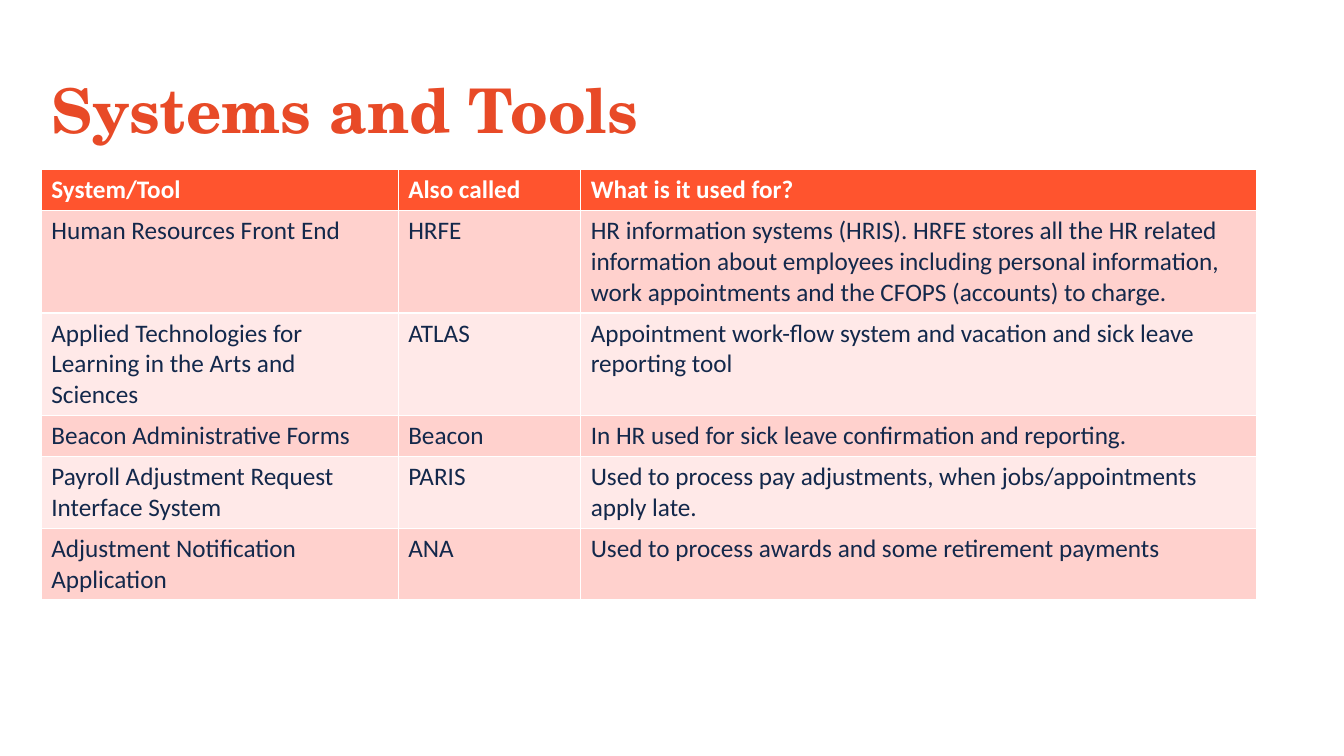
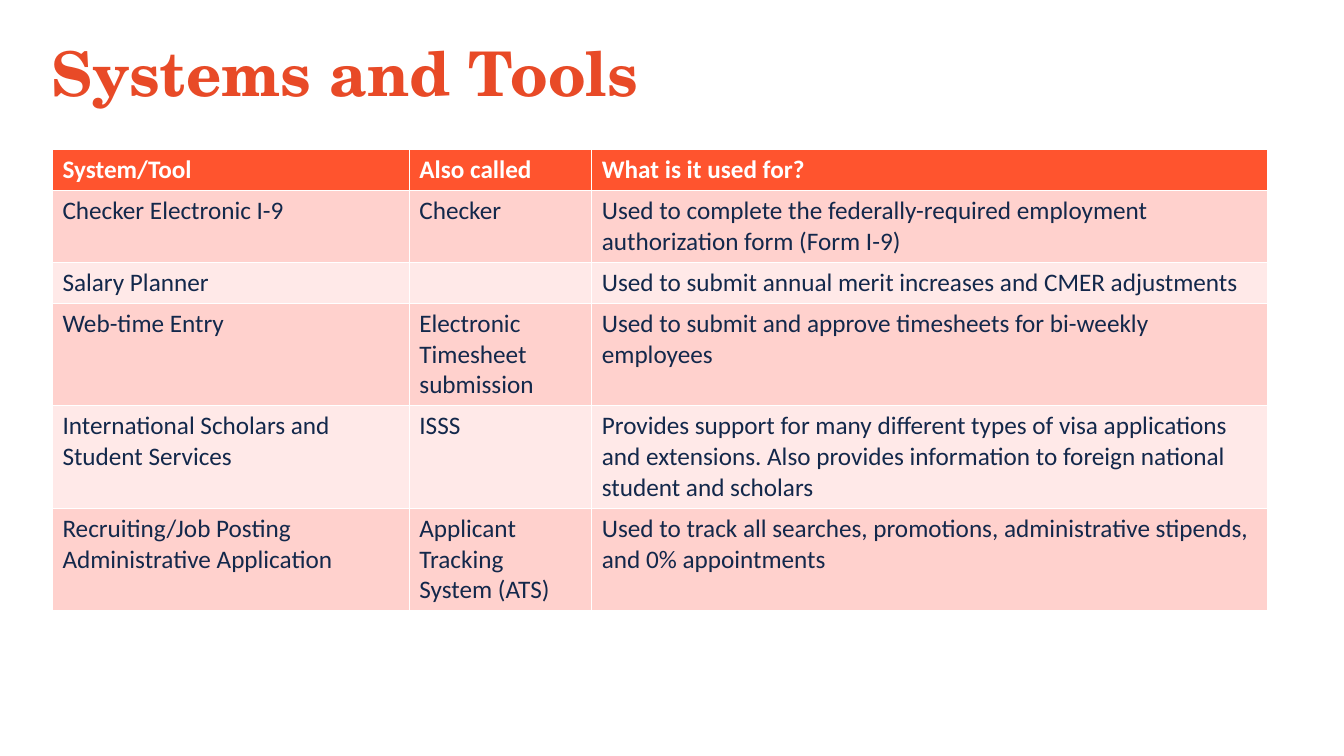
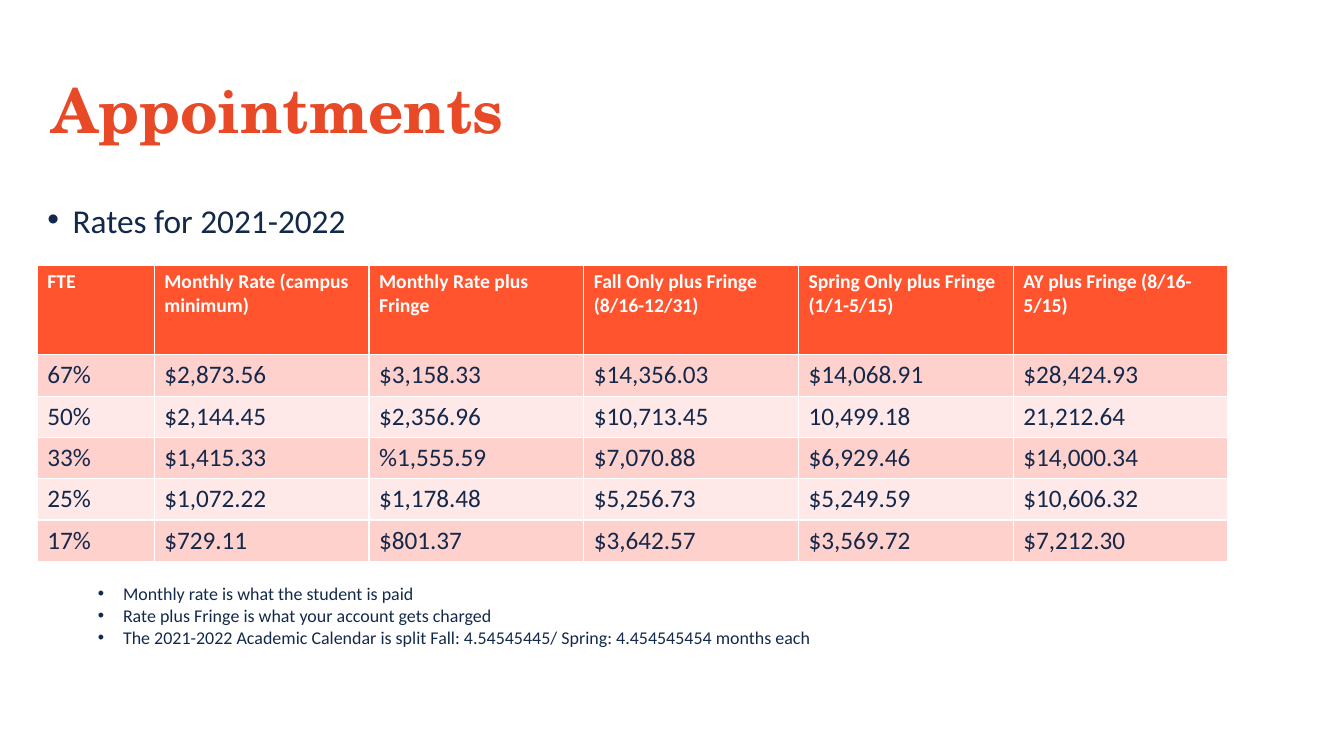
from dataclasses import dataclass

from lxml.etree import SubElement
from pptx import Presentation
from pptx.dml.color import RGBColor
from pptx.enum.text import MSO_ANCHOR, MSO_AUTO_SIZE, PP_ALIGN
from pptx.oxml.ns import qn
from pptx.util import Inches, Pt


@dataclass(frozen=True)
class Theme:
    orange: str = "E84A27"
    header: str = "FF542E"
    band_dark: str = "FFD1CD"
    band_light: str = "FFE9E8"
    white: str = "FFFFFF"
    navy: str = "13284B"
    body_navy: str = "13294B"
    title_font: str = "TeX Gyre Schola"
    text_font: str = "Calibri"
    title_size: float = 44
    body_size: float = 23.8
    cell_size: float = 18
    small_header_size: float = 14
    note_size: float = 12.8


T = Theme()
TITLE_ONLY, TITLE_AND_BODY = 5, 1

# Slide content
TOOL_HEADER = ["System/Tool", "Also called", "What is it used for?"]
TOOL_COLS = [3.54, 1.81, 6.7]
CORE_TOOLS = [
    ["Human Resources Front End", "HRFE",
     "HR information systems (HRIS). HRFE stores all the HR related information "
     "about employees including personal information, work appointments and the "
     "CFOPS (accounts) to charge."],
    ["Applied Technologies for Learning in the Arts and Sciences", "ATLAS",
     "Appointment work-flow system and vacation and sick leave reporting tool"],
    ["Beacon Administrative Forms", "Beacon",
     "In HR used for sick leave confirmation and reporting."],
    ["Payroll Adjustment Request Interface System", "PARIS",
     "Used to process pay adjustments, when jobs/appointments apply late."],
    ["Adjustment Notification Application", "ANA",
     "Used to process awards and some retirement payments"],
]
MORE_TOOLS = [
    ["Checker Electronic I-9", "Checker",
     "Used to complete the federally-required employment authorization form "
     "(Form I-9)"],
    ["Salary Planner", "",
     "Used to submit annual merit increases and CMER adjustments"],
    ["Web-time Entry", "Electronic Timesheet submission",
     "Used to submit and approve timesheets for bi-weekly employees"],
    ["International Scholars and Student Services", "ISSS",
     "Provides support for many different types of visa applications and "
     "extensions. Also provides information to foreign national student and "
     "scholars"],
    ["Recruiting/Job Posting Administrative Application",
     "Applicant Tracking System (ATS)",
     "Used to track all searches, promotions, administrative stipends, and 0% "
     "appointments"],
]
RATE_HEADER = ["FTE", "Monthly Rate (campus minimum)", "Monthly Rate plus Fringe",
               "Fall Only plus Fringe (8/16-12/31)",
               "Spring Only plus Fringe (1/1-5/15)", "AY plus Fringe (8/16-5/15)"]
RATE_COLS = [1.16] + [2.13] * 5
RATES = [
    ["67%", "$2,873.56", "$3,158.33", "$14,356.03", "$14,068.91", "$28,424.93"],
    ["50%", "$2,144.45", "$2,356.96", "$10,713.45", "10,499.18", "21,212.64"],
    ["33%", "$1,415.33", "%1,555.59", "$7,070.88", "$6,929.46", "$14,000.34"],
    ["25%", "$1,072.22", "$1,178.48", "$5,256.73", "$5,249.59", "$10,606.32"],
    ["17%", "$729.11", "$801.37", "$3,642.57", "$3,569.72", "$7,212.30"],
]
RATE_NOTES = [
    "Monthly rate is what the student is paid",
    "Rate plus Fringe is what your account gets charged",
    "The 2021-2022 Academic Calendar is split Fall: 4.54545445/ Spring: "
    "4.454545454 months each",
]


def set_attrs(obj, values):
    for name, value in values.items():
        setattr(obj, name, value)


def add_run(p, text, color, **font):
    r = p.add_run()
    r.text = text
    set_attrs(r.font, font)
    r.font.color.rgb = RGBColor.from_string(color)


def place(sp, left, top, width, height):
    set_attrs(sp, {"left": Inches(left), "top": Inches(top),
                   "width": Inches(width), "height": Inches(height)})


def add_slide(prs, layout, title, lift=0):
    """Add a titled slide; lift raises the title text within its box."""
    s = prs.slides.add_slide(prs.slide_layouts[layout])
    sp = s.shapes.title
    place(sp, 0.41, 0.4, 10.51, 1.45)
    tf = sp.text_frame
    set_attrs(tf, {"auto_size": MSO_AUTO_SIZE.NONE, "word_wrap": True,
                   "vertical_anchor": MSO_ANCHOR.MIDDLE,
                   "margin_bottom": Inches(0.05 + 2 * lift)})
    p = tf.paragraphs[0]
    set_attrs(p, {"alignment": PP_ALIGN.LEFT, "line_spacing": 0.9})
    add_run(p, title, T.orange, name=T.title_font, size=Pt(T.title_size), bold=True)
    return s


def add_bullet(p, text, size, level=0, before=0):
    pPr = p._p.get_or_add_pPr()
    pPr.set("marL", str(Inches(0.25 + 0.5 * level)))
    pPr.set("indent", str(Inches(-0.25)))
    SubElement(pPr, qn("a:buFont")).set("typeface", "Arial")
    SubElement(pPr, qn("a:buChar")).set("char", "•")
    set_attrs(p, {"level": level, "line_spacing": 0.7, "space_before": Pt(before)})
    add_run(p, text, T.body_navy, name=T.text_font, size=Pt(size))


def add_banded_table(s, left, top, cols, header, rows,
                     header_size=T.cell_size, header_height=0.41):
    heights = [header_height] + [0.41] * len(rows)
    frame = s.shapes.add_table(len(heights), len(cols), Inches(left), Inches(top),
                               Inches(sum(cols)), Inches(sum(heights)))
    table = frame.table
    for column, width in zip(table.columns, cols):
        column.width = Inches(width)
    for i, (row, height, texts) in enumerate(zip(table.rows, heights, [header] + rows)):
        row.height = Inches(height)
        is_header = i == 0
        fill = T.header if is_header else T.band_dark if i % 2 else T.band_light
        for cell, text in zip(row.cells, texts):
            cell.fill.solid()
            cell.fill.fore_color.rgb = RGBColor.from_string(fill)
            if text:
                add_run(cell.text_frame.paragraphs[0], text,
                        T.white if is_header else T.navy, name=T.text_font,
                        size=Pt(header_size if is_header else T.cell_size),
                        bold=is_header)


def add_rates_body(s):
    """Heading above the rates table and notes below it."""
    sp = s.placeholders[1]
    place(sp, 0.37, 2.04, 10.51, 4.53)
    tf = sp.text_frame
    set_attrs(tf, {"auto_size": MSO_AUTO_SIZE.NONE, "word_wrap": True})
    add_bullet(tf.paragraphs[0], "Rates for 2021-2022", T.body_size)
    for i, note in enumerate(RATE_NOTES):
        # The first note clears the table
        add_bullet(tf.add_paragraph(), note, T.note_size, level=1,
                   before=5 if i else 250)


def main():
    prs = Presentation()
    set_attrs(prs, {"slide_width": Inches(13.33), "slide_height": Inches(7.5)})

    # Systems and tools
    s = add_slide(prs, TITLE_ONLY, "Systems and Tools")
    add_banded_table(s, 0.41, 1.68, TOOL_COLS, TOOL_HEADER, CORE_TOOLS)

    # Systems and tools, continued
    s = add_slide(prs, TITLE_ONLY, "Systems and Tools", lift=0.37)
    add_banded_table(s, 0.52, 1.48, TOOL_COLS, TOOL_HEADER, MORE_TOOLS)

    # Appointment rates
    s = add_slide(prs, TITLE_AND_BODY, "Appointments")
    add_rates_body(s)
    add_banded_table(s, 0.37, 2.63, RATE_COLS, RATE_HEADER, RATES,
                     header_size=T.small_header_size, header_height=0.89)

    prs.save("out.pptx")


if __name__ == "__main__":
    main()
